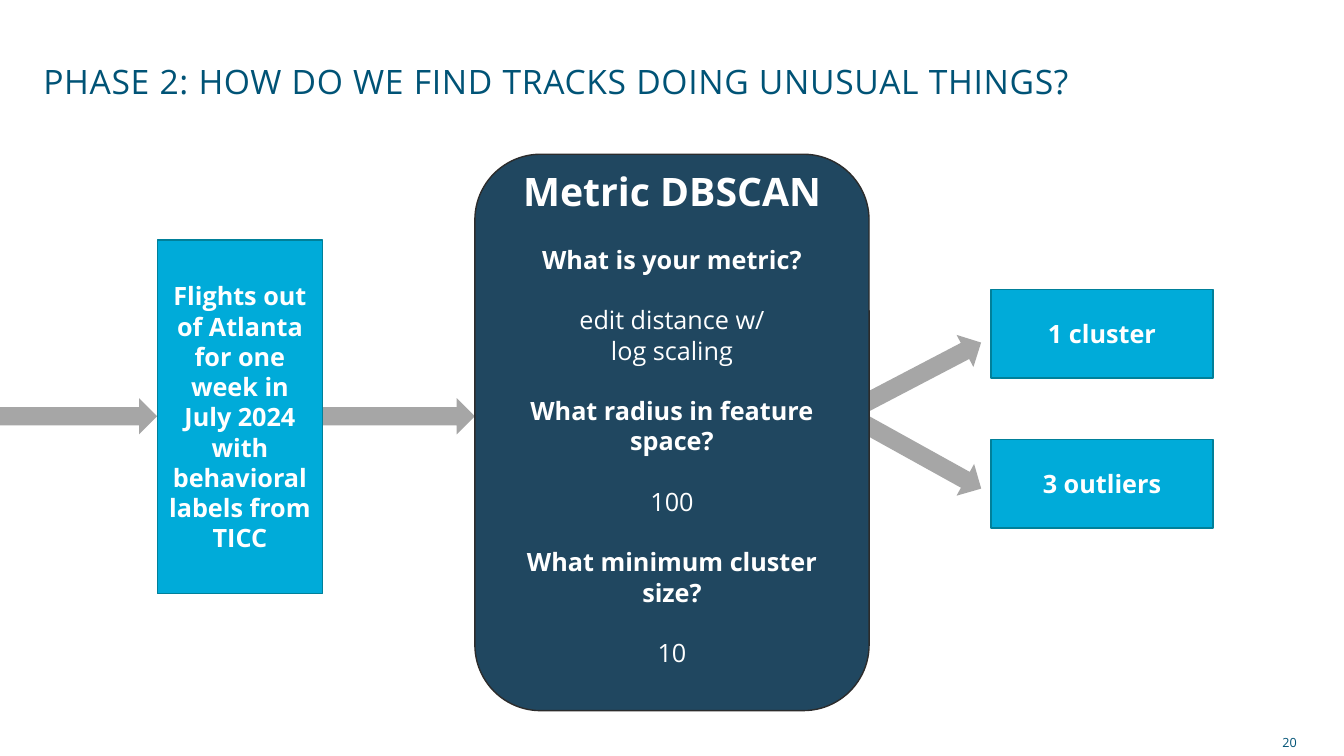
from pptx import Presentation
from pptx.dml.color import RGBColor
from pptx.enum.shapes import MSO_SHAPE as Shape
from pptx.enum.text import MSO_ANCHOR as Anchor, PP_ALIGN as Align
from pptx.util import Emu, Pt

PX = 9144
FONT = "Open Sans"
WHITE = RGBColor(0xFF, 0xFF, 0xFF)
TEAL = RGBColor(0x00, 0x53, 0x76)
NAVY = RGBColor(0x20, 0x47, 0x60)
CYAN = RGBColor(0x00, 0xAB, 0xD9)
CYAN_EDGE = RGBColor(0x00, 0x80, 0x9A)
CHARCOAL = RGBColor(0x2C, 0x2C, 0x2C)
GRAY = RGBColor(0xA6, 0xA6, 0xA6)


def px(length):
    return Emu(length * PX)


def assign(target, values):
    for key, value in values.items():
        setattr(target, key, value)


class FlowSlide:
    def __init__(self, deck):
        self.slide = deck.slides.add_slide(deck.slide_layouts[6])
        self.body = {"name": FONT, "size": Pt(18), "bold": True}

    def fill_text(self, frame, lines, color, align=Align.CENTER):
        for index, (text, changes, gap) in enumerate(lines):
            paragraph = frame.paragraphs[0] if index == 0 else frame.add_paragraph()
            paragraph.alignment = align
            if gap:
                paragraph.space_before = Pt(gap)
            run = paragraph.add_run()
            run.text = text
            assign(run.font, {**self.body, **changes})
            run.font.color.rgb = color

    def label(self, box, text, size, **frame_format):
        frame = self.slide.shapes.add_textbox(*map(px, box)).text_frame
        assign(frame, {"word_wrap": True, **frame_format})
        self.fill_text(frame, [(text, {"size": Pt(size), "bold": False}, 0)], TEAL, Align.LEFT)
        return frame.paragraphs[0]

    def title(self, box, text):
        margins = dict.fromkeys(
            ("margin_left", "margin_top", "margin_right", "margin_bottom"), 0)
        heading = self.label(box, text, 24, vertical_anchor=Anchor.MIDDLE, **margins)
        heading.line_spacing = 0.9
        heading.runs[0]._r.get_or_add_rPr().set("spc", "50")

    def block(self, kind, box, fill):
        block = self.slide.shapes.add_shape(kind, *map(px, box))
        block.shadow.inherit = False
        block.fill.solid()
        block.fill.fore_color.rgb = fill
        return block

    def arrow(self, box, rotation=0):
        arrow = self.block(Shape.RIGHT_ARROW, box, GRAY)
        arrow.line.fill.background()
        arrow.rotation = rotation

    def card(self, kind, box, fill, edge, lines, **frame_format):
        card = self.block(kind, box, fill)
        card.line.color.rgb = edge
        card.line.width = Pt(1)
        assign(card.text_frame, {
            "word_wrap": True, "vertical_anchor": Anchor.MIDDLE, **frame_format})
        self.fill_text(card.text_frame, lines, WHITE)


def main():
    deck = Presentation()
    assign(deck, {"slide_width": px(1333), "slide_height": px(750)})
    flow = FlowSlide(deck)

    for box, rotation in (
        ((827, 429, 156, 36), 29),
        ((826, 358, 156, 36), 332.4),
        ((320, 395, 151, 36), 0),
        ((0, 395, 156, 36), 0),
    ):
        flow.arrow(box, rotation)

    flow.title((43, 45, 1123, 75), "PHASE 2: HOW DO WE FIND TRACKS DOING UNUSUAL THINGS?")
    flow.label((1262, 724, 54, 30), "20", 9)

    flow.card(Shape.RECTANGLE, (156, 238, 164, 351), CYAN, CYAN_EDGE, [
        ("Flights out of Atlanta for one week in July 2024", {}, 0),
        ("with behavioral labels from TICC", {}, 0),
    ])

    blank_line = 21.6
    dbscan = [("Metric DBSCAN", {"size": Pt(28)}, 0)]
    for question, answers in (
        ("What is your metric?", ("edit distance w/", "log scaling")),
        ("What radius in feature space?", ("100",)),
        ("What minimum cluster size?", ("10",)),
    ):
        dbscan.append((question, {}, blank_line))
        for index, answer in enumerate(answers):
            dbscan.append((answer, {"bold": False}, 0 if index else blank_line))
    flow.card(Shape.ROUNDED_RECTANGLE, (471, 153, 391, 552), NAVY, CHARCOAL, dbscan,
              margin_bottom=px(35))

    for row, result in enumerate(("1 cluster", "3 outliers")):
        flow.card(Shape.RECTANGLE, (983, 287 + 149 * row, 220, 88), CYAN, CYAN_EDGE,
                  [(result, {}, 0)])

    deck.save("out.pptx")


if __name__ == "__main__":
    main()
